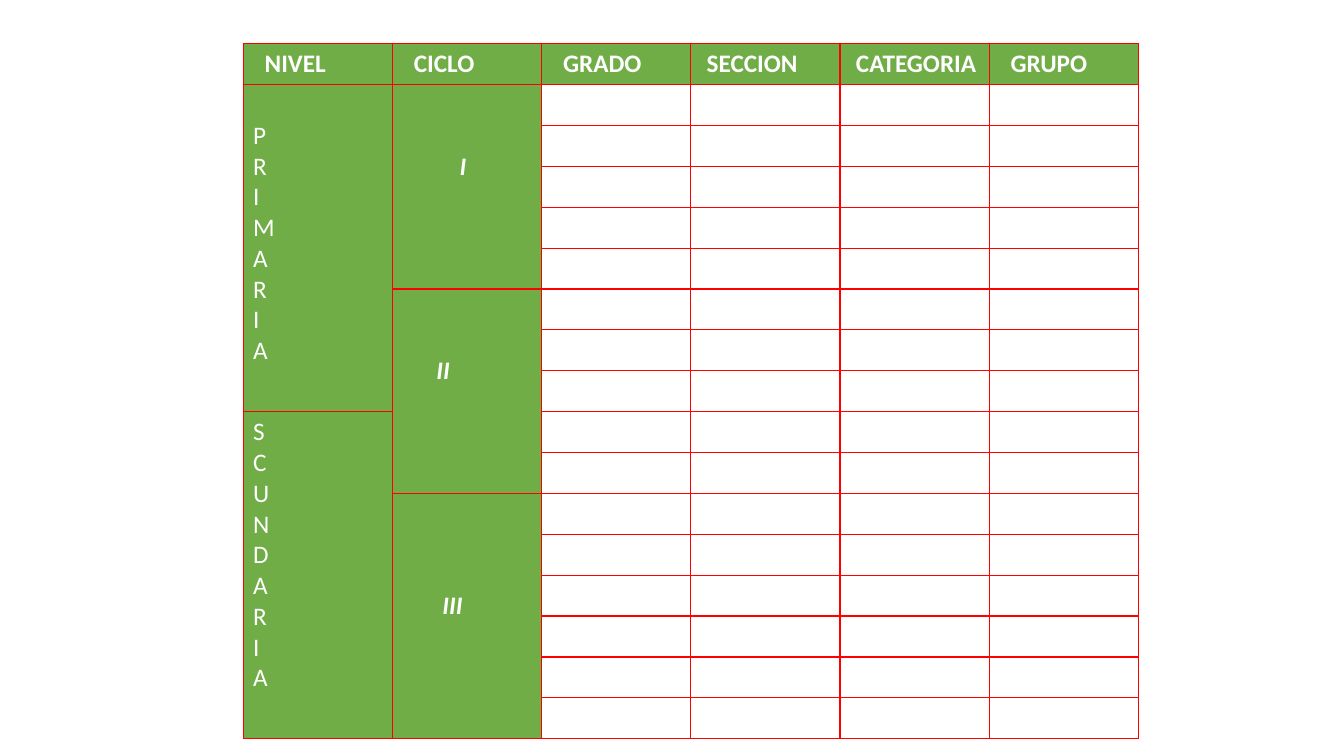
import pptx
import pptx.dml.color
import pptx.oxml
import pptx.oxml.ns
import pptx.util
from dataclasses import dataclass

Cm = pptx.util.Cm
Pt = pptx.util.Pt


@dataclass(frozen=True)
class Theme:
    green: str = "70AD47"
    white: str = "FFFFFF"
    red: str = "FF0000"
    font: str = "Calibri"
    size: int = 18
    border: int = 1


THEME = Theme()
ROWS = 17
TABLE_BOX = (6.13, 1.1, 22.56, 17.51)

# Heading and its left margin in cm
HEADINGS = [("NIVEL", 0.54), ("CICLO", 0.54), ("GRADO", 0.54),
            ("SECCION", 0.4), ("CATEGORIA", 0.4), ("GRUPO", 0.54)]

# Column, first row, row count, lines, left and top margins in cm, format
BOLD = {"bold": True}
BOLD_ITALIC = {"bold": True, "italic": True}
GROUPS = [
    (0, 1, 8, "PRIMARIA", 0.25, 0.9, {}),
    (0, 9, 8, "SCUNDARIA", 0.25, 0.13, {}),
    (1, 1, 5, ["I"], 1.69, 1.68, BOLD_ITALIC),
    (1, 6, 5, ["II"], 1.11, 1.68, BOLD_ITALIC),
    (1, 11, 6, ["III"], 1.26, 2.45, BOLD_ITALIC),
]


def rgb(colour):
    return pptx.dml.color.RGBColor.from_string(colour)


def border_cell(cell):
    properties = cell._tc.get_or_add_tcPr()
    for position, side in enumerate(("lnL", "lnR", "lnT", "lnB")):
        line = pptx.oxml.parse_xml(
            f'<a:{side} {pptx.oxml.ns.nsdecls("a")} w="{Pt(THEME.border)}">'
            f'<a:solidFill><a:srgbClr val="{THEME.red}"/></a:solidFill>'
            f'</a:{side}>')
        properties.insert(position, line)


def fill_green(cell):
    cell.fill.solid()
    cell.fill.fore_color.rgb = rgb(THEME.green)


def write_cell(cell, lines, left, top, font_format):
    """Write one paragraph per line, offset by the cell's margins in cm."""
    margins = {"margin_left": Cm(left), "margin_top": Cm(top),
               "margin_right": Cm(0.1)}
    for name, value in margins.items():
        setattr(cell, name, value)
    values = {"name": THEME.font, "size": Pt(THEME.size),
              "bold": False, "italic": False, **font_format}
    for index, line in enumerate(lines):
        frame = cell.text_frame
        para = frame.add_paragraph() if index else frame.paragraphs[0]
        span = para.add_run()
        span.text = line
        span.font.color.rgb = rgb(THEME.white)
        for name, value in values.items():
            setattr(span.font, name, value)


def add_level_table(page, box):
    left, top, width, height = box
    table = page.shapes.add_table(ROWS, len(HEADINGS), Cm(left), Cm(top),
                                  Cm(width), Cm(height)).table
    table.first_row = table.horz_banding = False
    for column in table.columns:
        column.width = Cm(width / len(HEADINGS))
    for row in table.rows:
        row.height = Cm(height / ROWS)

    for row in range(ROWS):
        for column in range(len(HEADINGS)):
            cell = table.cell(row, column)
            if row == 0 or column < 2:
                fill_green(cell)
            else:
                cell.fill.background()
            border_cell(cell)

    for column, (heading, margin) in enumerate(HEADINGS):
        write_cell(table.cell(0, column), [heading], margin, 0.13, BOLD)
    for column, first, count, lines, margin, offset, font_format in GROUPS:
        cell = table.cell(first, column)
        cell.merge(table.cell(first + count - 1, column))
        write_cell(cell, lines, margin, offset, font_format)


def main():
    deck = pptx.Presentation()
    deck.slide_width, deck.slide_height = Cm(33.87), Cm(19.05)
    page = deck.slides.add_slide(deck.slide_layouts[6])
    add_level_table(page, TABLE_BOX)
    deck.save("out.pptx")


if __name__ == "__main__":
    main()
